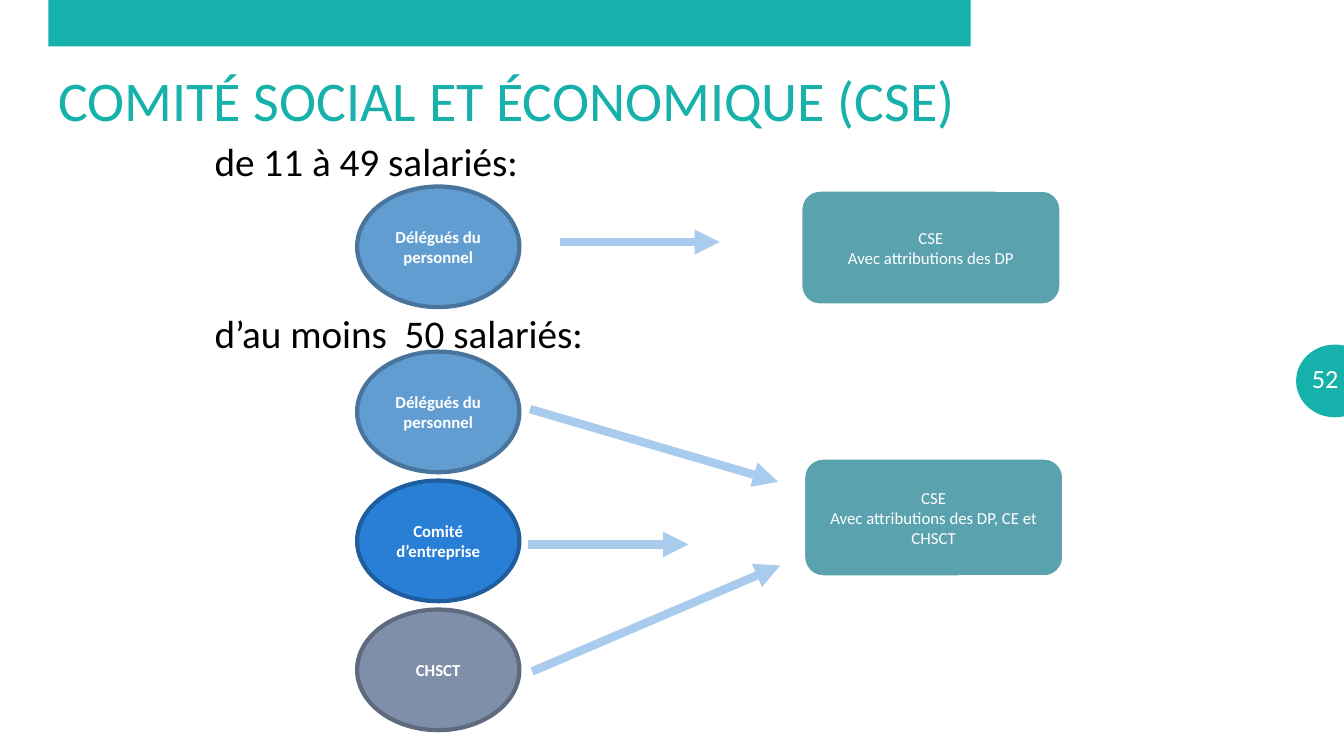
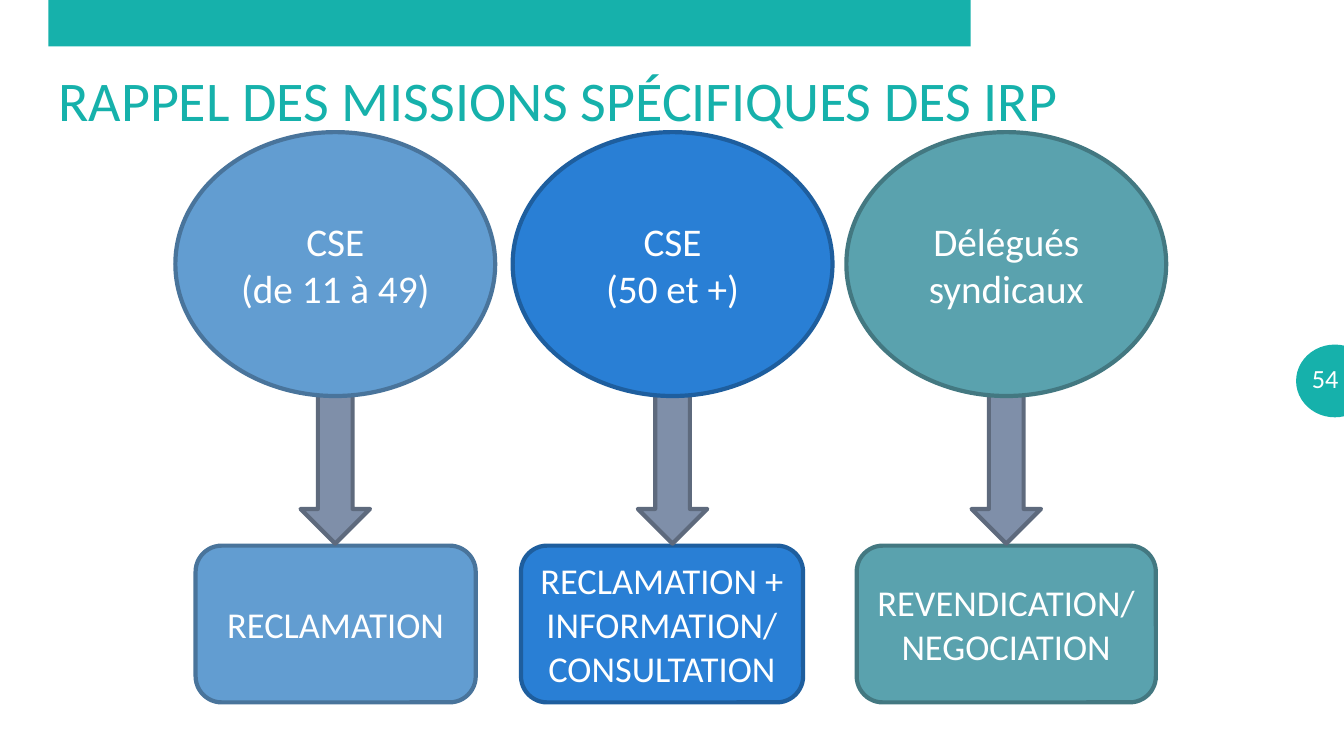
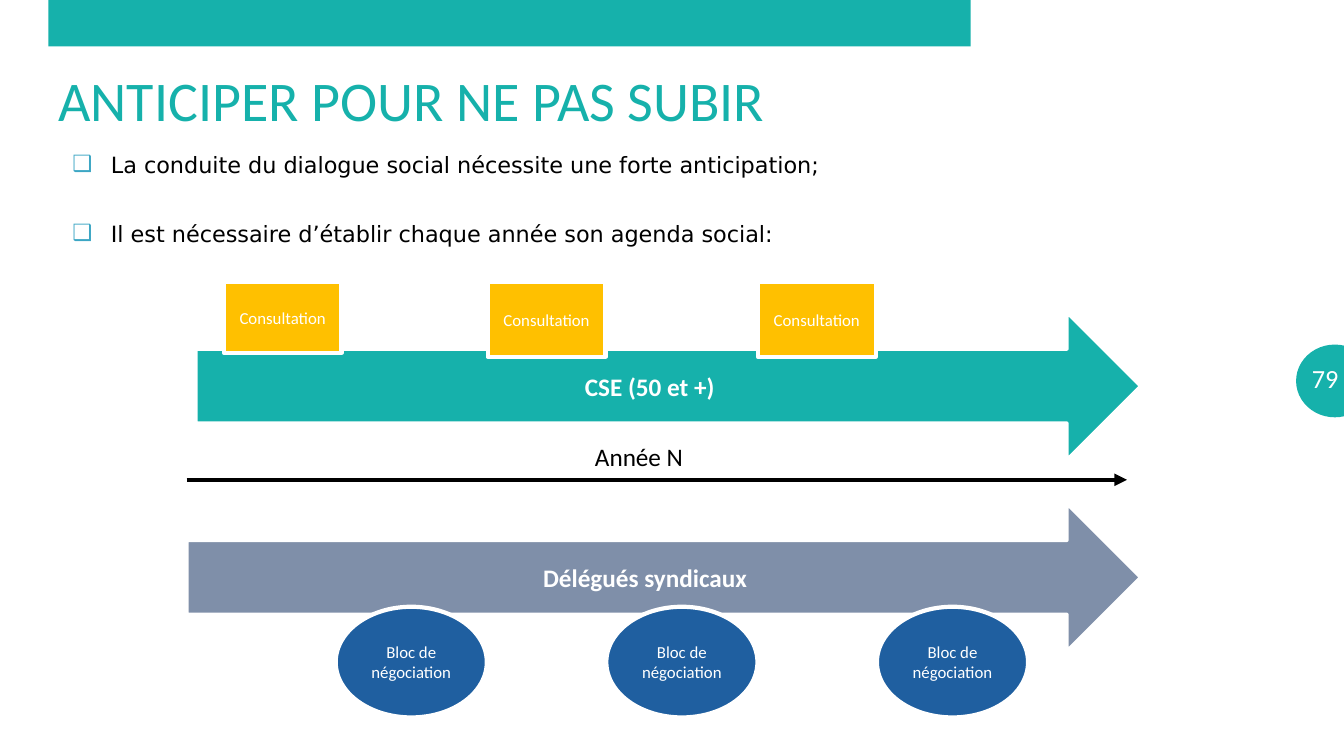
from lxml import etree
from pptx import Presentation
from pptx import util as u
from pptx.dml.color import RGBColor
from pptx.enum import shapes, text
from pptx.oxml import ns

COLOURS = {
    "teal": "16B1AB", "white": "FFFFFF", "black": "000000",
    "sky": "629DD1", "sky edge": "49749B",
    "blue": "297FD5", "blue edge": "1E5E9E",
    "slate": "7F8FA9", "slate edge": "5E6A7D",
    "sea": "5AA2AE", "sea edge": "437881",
    "pale": "A9CCEE", "navy": "1F5FA0", "gold": "FFC000", "bullet": "3CA6C4",
}
KIND = shapes.MSO_SHAPE
LEFT, CENTER, RIGHT, JUSTIFY = (text.PP_ALIGN.LEFT, text.PP_ALIGN.CENTER,
                                text.PP_ALIGN.RIGHT, text.PP_ALIGN.JUSTIFY)
TOP, MIDDLE = text.MSO_ANCHOR.TOP, text.MSO_ANCHOR.MIDDLE


def colour(name):
    return RGBColor.from_string(COLOURS[name])


def add_bullet(para, sign="❑", indent=0.97):
    """Give a paragraph a coloured bullet with a hanging indent."""
    props = para._p.get_or_add_pPr()
    props.set("marL", str(u.Cm(indent)))
    props.set("indent", str(-u.Cm(indent)))
    tint = etree.SubElement(props, ns.qn("a:buClr"))
    etree.SubElement(tint, ns.qn("a:srgbClr"), val=COLOURS["bullet"])
    etree.SubElement(props, ns.qn("a:buFont"), typeface="DejaVu Sans")
    etree.SubElement(props, ns.qn("a:buChar"), char=sign)


def write(frame, words, size=12, ink="white", bold=False, font="Calibri",
          align=CENTER, anchor=MIDDLE, spacing=None, gap=0, bullet=False):
    """Fill a text frame, one paragraph for each line of words."""
    frame.word_wrap = True
    frame.auto_size = text.MSO_AUTO_SIZE.NONE
    frame.vertical_anchor = anchor
    for index, line in enumerate(words.split("\n")):
        para = frame.add_paragraph() if index else frame.paragraphs[0]
        para.alignment = align
        para.space_before = u.Pt(gap if index else 0)
        if spacing:
            para.line_spacing = spacing
        if bullet:
            add_bullet(para)
        span = para.add_run()
        span.text = line
        span.font.name = font
        span.font.size = u.Pt(size)
        span.font.bold = bold
        span.font.color.rgb = colour(ink)


def place(shape, left, top, width, height):
    shape.left, shape.top = u.Cm(left), u.Cm(top)
    shape.width, shape.height = u.Cm(width), u.Cm(height)


def add_figure(page, kind, at, fill, edge=None, words="", width=3, **style):
    """Preset shape with an optional outline and text."""
    figure = page.shapes.add_shape(kind, *map(u.Cm, at))
    figure.shadow.inherit = False
    figure.fill.solid()
    figure.fill.fore_color.rgb = colour(fill)
    if edge:
        figure.line.color.rgb = colour(edge)
        figure.line.width = u.Pt(width)
    else:
        figure.line.fill.background()
    if words:
        write(figure.text_frame, words, **style)


def add_label(page, at, words, **style):
    box = page.shapes.add_textbox(*map(u.Cm, at))
    write(box.text_frame, words, **style)
    return box


def add_arrow(page, start, end, ink, width):
    arrow = page.shapes.add_connector(shapes.MSO_CONNECTOR.STRAIGHT,
                                      *map(u.Cm, start + end))
    arrow.line.color.rgb = colour(ink)
    arrow.line.width = u.Pt(width)
    etree.SubElement(arrow.line._get_or_add_ln(), ns.qn("a:tailEnd"),
                     type="triangle")
    etree.SubElement(arrow._element.spPr, ns.qn("a:effectLst"))


def add_page(deck, layout, title, number):
    """Slide with the shared band, page number and title."""
    page = deck.slides.add_slide(deck.slide_layouts[layout])
    add_figure(page, KIND.RECTANGLE, (1.22, 0, 23.24, 1.17), "teal")
    add_figure(page, KIND.OVAL, (32.69, 8.71, 1.9, 1.78), "teal", "teal",
               width=1.5)
    box = add_label(page, (32.59, 9.02, 1.47, 1.02), number, size=18.7,
                    align=RIGHT)
    frame = box.text_frame
    frame.margin_left = frame.margin_right = u.Cm(0.33)
    frame.margin_top = frame.margin_bottom = u.Cm(0.18)
    place(page.shapes.title, 1.22, 1.52, 31.47, 1.96)
    write(page.shapes.title.text_frame, title, size=40, ink="teal",
          align=LEFT, anchor=TOP)
    return page


def build_committee(deck):
    page = add_page(deck, 5, "COMITÉ SOCIAL ET ÉCONOMIQUE (CSE)", "52")

    # Former bodies
    bodies = [
        (4.7, "sky", "Délégués du personnel"),
        (8.86, "sky", "Délégués du personnel"),
        (12.11, "blue", "Comité d’entreprise"),
        (15.36, "slate", "CHSCT"),
    ]
    for top, fill, name in bodies:
        add_figure(page, KIND.OVAL, (9, top, 4.09, 3.04), fill,
                   fill + " edge", name, bold=True)

    # Committees that replace them
    committees = [
        (20.17, 4.78, 2.92, "CSE\nAvec attributions des DP"),
        (20.24, 11.53, 3.02, "CSE\nAvec attributions des DP, CE et CHSCT"),
    ]
    for left, top, height, name in committees:
        add_figure(page, KIND.ROUNDED_RECTANGLE, (left, top, 6.58, height),
                   "sea", "white", name)

    # Arrows from bodies to committees
    for start, end in [((14.12, 6.1), (18.14, 6.1)),
                       ((13.36, 10.31), (19.61, 12.14)),
                       ((13.31, 13.72), (17.35, 13.72)),
                       ((13.41, 16.92), (19.66, 14.25))]:
        add_arrow(page, start, end, "pale", 6)

    # Company sizes
    for top, words in [(3.33, "de 11 à 49 salariés:"),
                       (7.67, "d’au moins  50 salariés:")]:
        add_label(page, (5.16, top, 14.27, 1.45), words, size=28,
                  ink="black", align=LEFT, anchor=TOP)


def build_missions(deck):
    page = add_page(deck, 5, "RAPPEL DES MISSIONS SPÉCIFIQUES DES IRP", "54")

    # One lane a body: centre, colour, body, box left and width, mission
    lanes = [
        (8.45, "sky", "CSE\n(de 11 à 49)", 4.93, 7.06, "RECLAMATION"),
        (16.95, "blue", "CSE\n(50 et +)", 13.13, 7.11,
         "RECLAMATION +\nINFORMATION/CONSULTATION"),
        (25.36, "sea", "Délégués syndicaux", 21.59, 7.54,
         "REVENDICATION/NEGOCIATION"),
    ]
    oval_width, arrow_width = 8.06, 1.75
    for centre, fill, body, left, width, mission in lanes:
        edge = fill + " edge"
        add_figure(page, KIND.ROUNDED_RECTANGLE, (left, 13.75, width, 3.95),
                   fill, edge, mission, size=26)
        add_figure(page, KIND.DOWN_ARROW,
                   (centre - arrow_width / 2, 9.7, arrow_width, 4),
                   "slate", "slate edge")
        add_figure(page, KIND.OVAL,
                   (centre - oval_width / 2, 3.33, oval_width, 6.65),
                   fill, edge, body, size=28)


def build_agenda(deck):
    page = add_page(deck, 1, "ANTICIPER POUR NE PAS SUBIR", "79")

    # Advice
    body = page.placeholders[1]
    place(body, 1.57, 3.61, 28.02, 3.2)
    write(body.text_frame,
          "La conduite du dialogue social nécessite une forte anticipation;\n"
          "Il est nécessaire d’établir chaque année son agenda social:",
          size=16, ink="black", font="DejaVu Sans", align=JUSTIFY,
          anchor=TOP, spacing=1.1, gap=28, bullet=True)

    # Yearly tracks
    for left, top, width, fill, name in [
            (4.93, 7.85, 23.83, "teal", "CSE (50 et +)"),
            (4.7, 12.67, 24.06, "slate", "Délégués syndicaux")]:
        add_figure(page, KIND.RIGHT_ARROW, (left, top, width, 3.76), fill,
                   "white", name, size=18, bold=True)

    # Time line
    add_arrow(page, (4.7, 12.09), (28.4, 12.09), "black", 3)
    add_label(page, (13.82, 11, 4.57, 1.02), "Année N", size=18,
              ink="black", anchor=TOP)

    # Events on the tracks
    for index in range(3):
        add_figure(page, KIND.OVAL, (8.46 + 6.82 * index, 15.29, 3.81, 2.79),
                   "navy", "white", "Bloc de négociation")
    for left, height in [(5.64, 1.78), (12.29, 1.88), (19.1, 1.88)]:
        add_figure(page, KIND.RECTANGLE, (left, 7.11, 2.97, height),
                   "gold", "white", "Consultation")


def main():
    deck = Presentation()
    deck.slide_width, deck.slide_height = u.Cm(33.87), u.Cm(19.05)
    build_committee(deck)
    build_missions(deck)
    build_agenda(deck)
    deck.save("out.pptx")


if __name__ == "__main__":
    main()
